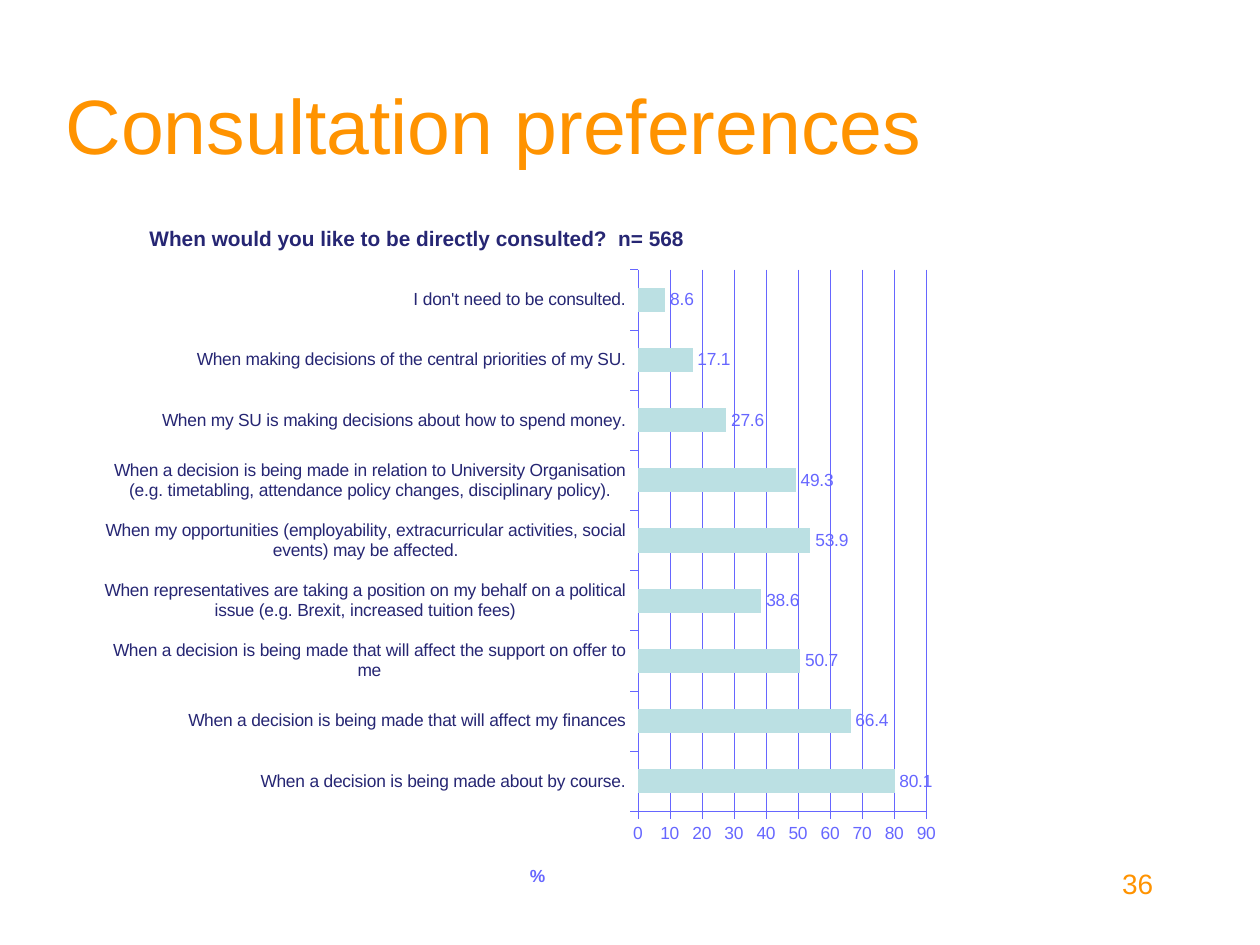
from lxml import etree
from pptx import Presentation
from pptx.chart.data import CategoryChartData
from pptx.dml.color import RGBColor
from pptx.enum.chart import XL_CHART_TYPE, XL_LABEL_POSITION, XL_TICK_MARK
from pptx.enum.text import MSO_ANCHOR, PP_ALIGN
from pptx.oxml.ns import qn
from pptx.util import Inches, Pt

BAR = XL_CHART_TYPE.BAR_CLUSTERED
OUTSIDE_END = XL_LABEL_POSITION.OUTSIDE_END
TICK_OUT, TICK_NONE = XL_TICK_MARK.OUTSIDE, XL_TICK_MARK.NONE
LEFT, RIGHT = PP_ALIGN.LEFT, PP_ALIGN.RIGHT
MIDDLE = MSO_ANCHOR.MIDDLE

# Content
HEADING = "Consultation preferences"
PAGE_NUMBER = "36"
QUESTION = "When would you like to be directly consulted?  n= 568"
UNIT = "%"
ANSWERS = [
    ("When a decision is being made about by course.", 80.1),
    ("When a decision is being made that will affect my finances", 66.4),
    ("When a decision is being made that will affect the support on offer to me", 50.7),
    ("When representatives are taking a position on my behalf on a political "
     "issue (e.g. Brexit, increased tuition fees)", 38.6),
    ("When my opportunities (employability, extracurricular activities, social "
     "events) may be affected.", 53.9),
    ("When a decision is being made in relation to University Organisation "
     "(e.g. timetabling, attendance policy changes, disciplinary policy).", 49.3),
    ("When my SU is making decisions about how to spend money.", 27.6),
    ("When making decisions of the central priorities of my SU.", 17.1),
    ("I don't need to be consulted.", 8.6),
]

# Style and places (left, top, width, height in inches)
FONT = "Arial"
ORANGE, NAVY, VIOLET, AQUA = "FF9300", "262673", "6666FF", "BBE0E3"
HEADING_BOX = (0.42, 0.36, 8.5, 1.25)
NUMBER_BOX = (7.17, 6.83, 2.08, 0.5)
CHART_BOX = (0.83, 1.59, 6.74, 5.62)
PLOT_BOX = (5.04, 2.14, 2.31, 4.3)
QUESTION_AT = (1.1, 1.76)
UNIT_AT = (4.15, 6.84)


def color(hex_value):
    return RGBColor.from_string(hex_value)


def style(font, size, hex_value, bold=False):
    font.name, font.size, font.bold = FONT, Pt(size), bold
    font.color.rgb = color(hex_value)


def box(values):
    return [Inches(value) for value in values]


def place(parent, position, after, inner=False):
    """Put a manual layout, given in slide inches, on a part of the chart."""
    for old in parent.findall(qn("c:layout")):
        parent.remove(old)
    layout = etree.Element(qn("c:layout"))
    manual = etree.SubElement(layout, qn("c:manualLayout"))
    left, top, width, height = CHART_BOX
    settings = [("layoutTarget", "inner")] if inner else []
    settings += [("xMode", "edge"), ("yMode", "edge")]
    fractions = [(position[0] - left) / width, (position[1] - top) / height]
    if inner:
        fractions += [position[2] / width, position[3] / height]
    settings += [(key, f"{part:.4f}") for key, part in zip("xywh", fractions)]
    for key, value in settings:
        etree.SubElement(manual, qn(f"c:{key}")).set("val", value)
    parent.insert(after, layout)


def write_title(owner, text, size, hex_value, position):
    title = owner.chart_title if hasattr(owner, "chart_title") else owner.axis_title
    title.text_frame.text = text
    style(title.text_frame.paragraphs[0].font, size, hex_value, bold=True)
    place(title._element, position, after=1)


prs = Presentation()
prs.slide_width, prs.slide_height = Inches(10), Inches(7.5)
slide = prs.slides.add_slide(prs.slide_layouts[5])

# Heading
heading = slide.shapes.title
heading.left, heading.top, heading.width, heading.height = box(HEADING_BOX)
heading.text_frame.text = HEADING
heading.text_frame.vertical_anchor = MIDDLE
heading.text_frame.paragraphs[0].alignment = LEFT
style(heading.text_frame.paragraphs[0].font, 44, ORANGE)

# Chart
data = CategoryChartData(number_format="0.0")
data.categories = [answer for answer, _ in ANSWERS]
data.add_series("Series 1", [share for _, share in ANSWERS])
chart = slide.shapes.add_chart(BAR, *box(CHART_BOX), data).chart
style(chart.font, 10, VIOLET)
chart.has_legend = False
chart.has_title = True
write_title(chart, QUESTION, 12, NAVY, QUESTION_AT)
place(chart._chartSpace.chart.plotArea, PLOT_BOX, after=0, inner=True)

# Bars and their values
plot = chart.plots[0]
plot.gap_width = 150
plot.vary_by_categories = False
bars = plot.series[0].format.fill
bars.solid()
bars.fore_color.rgb = color(AQUA)
plot.has_data_labels = True
labels = plot.data_labels
labels.show_value = True
labels.number_format, labels.number_format_is_linked = "0.0", False
labels.position = OUTSIDE_END
style(labels.font, 10, VIOLET)

# Axes
answers_axis, share_axis = chart.category_axis, chart.value_axis
share_axis.minimum_scale, share_axis.maximum_scale = 0, 90
share_axis.major_unit = 10
share_axis.has_major_gridlines = True
share_axis.tick_labels.number_format = "0"
share_axis.tick_labels.number_format_is_linked = False
share_axis.has_title = True
write_title(share_axis, UNIT, 10, VIOLET, UNIT_AT)
for axis, hex_value in ((answers_axis, NAVY), (share_axis, VIOLET)):
    axis.major_tick_mark, axis.minor_tick_mark = TICK_OUT, TICK_NONE
    style(axis.tick_labels.font, 10, hex_value)
for line in (answers_axis.format.line, share_axis.format.line,
             share_axis.major_gridlines.format.line):
    line.color.rgb = color(VIOLET)
    line.width = Pt(0.25)

# Page number
number = slide.shapes.add_textbox(*box(NUMBER_BOX)).text_frame
number.word_wrap = True
number.text = PAGE_NUMBER
number.paragraphs[0].alignment = RIGHT
style(number.paragraphs[0].font, 16, ORANGE)

prs.save("out.pptx")
